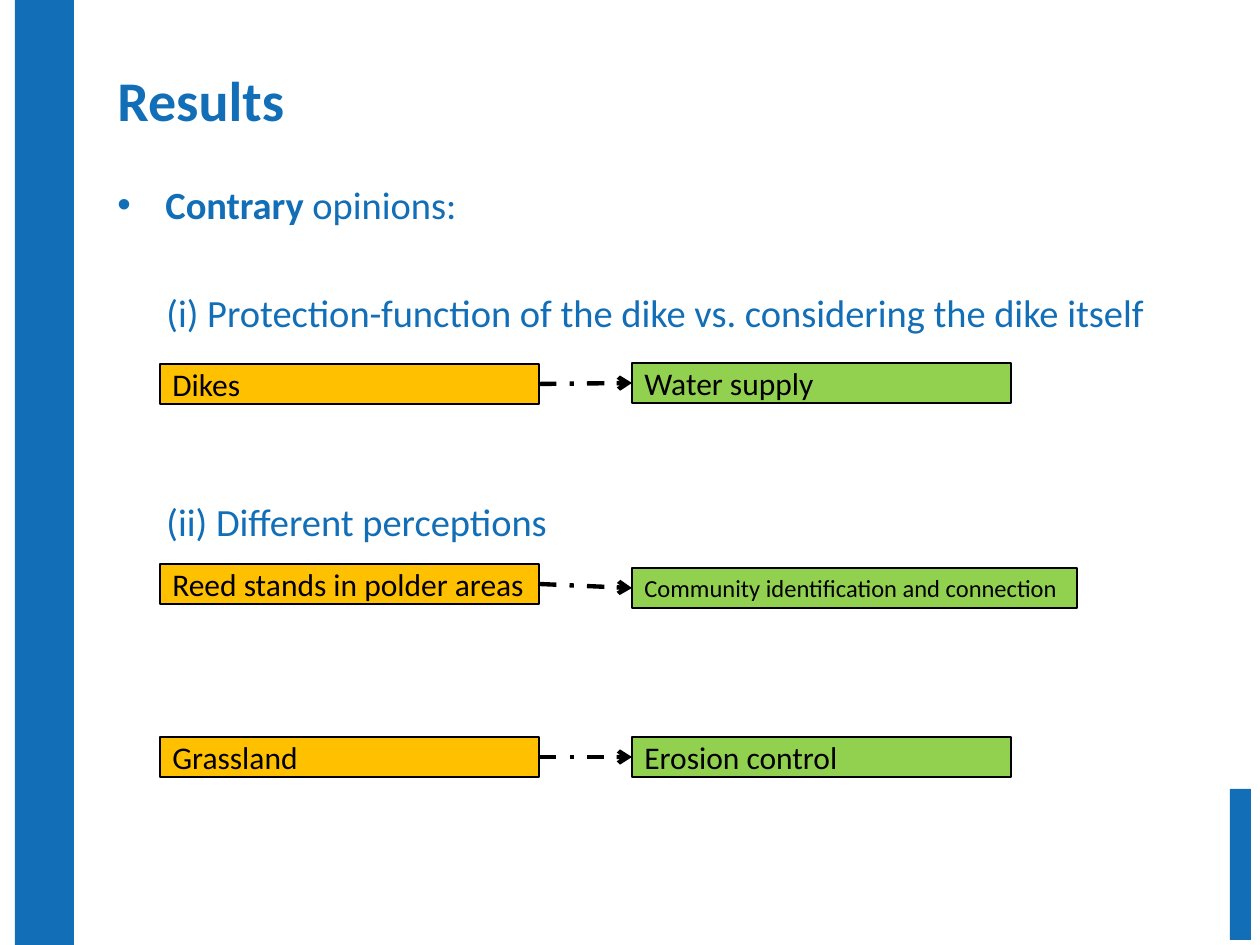
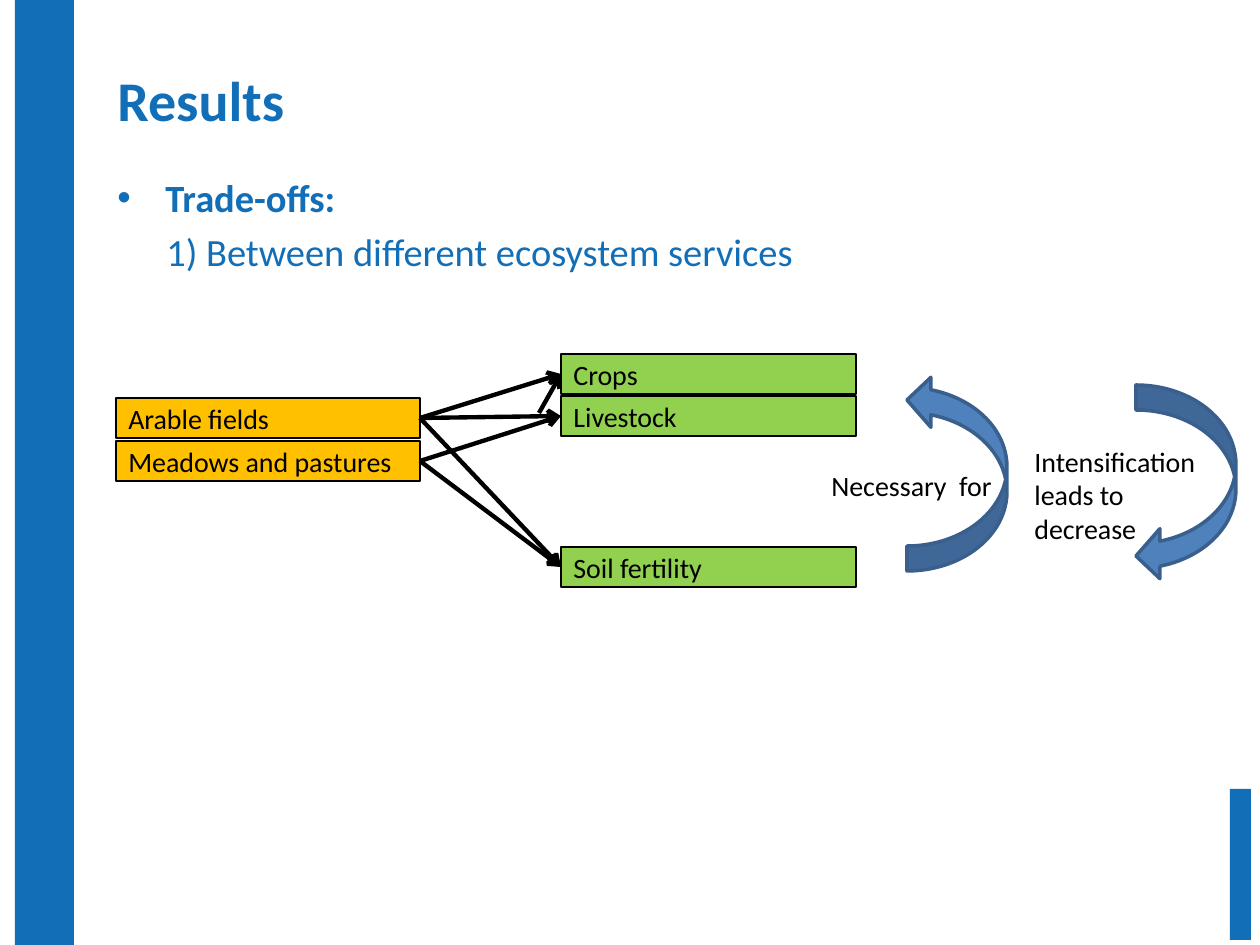
import pptx
import pptx.util
import pptx.dml.color
import pptx.enum.dml
import pptx.enum.shapes
import pptx.enum.text
import pptx.oxml.ns
import lxml.etree

PX = 914400 / 126
FONT = "Calibri"
COLORS = {
    "blue": "126EB6",
    "gold": "FFC000",
    "green": "92D050",
    "black": "000000",
    "steel": "4F81BD",
    "edge": "3A5F8C",
}
KINDS = pptx.enum.shapes.MSO_SHAPE
ANCHOR = pptx.enum.text.MSO_ANCHOR
DASH = pptx.enum.dml.MSO_LINE.DASH_DOT


def emu(px):
    return pptx.util.Emu(round(px * PX))


def rgb(name):
    return pptx.dml.color.RGBColor.from_string(COLORS[name])


def add_xml(parent, tag, **attrs):
    return lxml.etree.SubElement(parent, pptx.oxml.ns.qn(tag), attrs)


def write(para, text, size=18, color="black", bold=False):
    run = para.add_run()
    run.text = text
    font = run.font
    font.name = FONT
    font.size = pptx.util.Pt(size)
    font.bold = bold
    font.color.rgb = rgb(color)


def add_text(slide, area, text="", anchor=ANCHOR.TOP, **style):
    box = slide.shapes.add_textbox(*map(emu, area))
    frame = box.text_frame
    frame.word_wrap = True
    frame.vertical_anchor = anchor
    if text:
        write(frame.paragraphs[0], text, **style)
    return frame


def add_form(slide, kind, area, fill, line=None, width=0.75):
    form = slide.shapes.add_shape(kind, *map(emu, area))
    form.shadow.inherit = False
    form.fill.solid()
    form.fill.fore_color.rgb = rgb(fill)
    if line:
        form.line.color.rgb = rgb(line)
        form.line.width = pptx.util.Pt(width)
    else:
        form.line.fill.background()
    return form


def add_label(slide, text, left, top, width, fill, size=18):
    box = add_form(slide, KINDS.RECTANGLE, (left, top, width, 40), fill, "black")
    frame = box.text_frame
    frame.word_wrap = True
    frame.margin_top = frame.margin_bottom = 0
    frame.vertical_anchor = ANCHOR.MIDDLE
    para = frame.paragraphs[0]
    para.alignment = pptx.enum.text.PP_ALIGN.LEFT
    write(para, text, size=size)
    return box


def add_arrow(slide, start, goal, dash=None):
    free = isinstance(start, tuple)
    ends = [emu(v) for v in start] if free else [0, 0]
    link = slide.shapes.add_connector(
        pptx.enum.shapes.MSO_CONNECTOR.STRAIGHT, *ends, 0, 0)
    if not free:
        link.begin_connect(start, 3)
    link.end_connect(goal, 1)
    link.line.color.rgb = rgb("black")
    link.line.width = pptx.util.Pt(2.5)
    if dash:
        link.line.dash_style = dash
    add_xml(link.line._get_or_add_ln(), "a:tailEnd", type="arrow")
    add_xml(link._element.spPr, "a:effectLst")


def add_curve(slide, left, top, flip=False):
    curve = add_form(slide, KINDS.CURVED_LEFT_ARROW, (left, top, 100, 196),
                     "steel", "edge", 2)
    for place, value in enumerate((0.25, 0.5, 0.24)):
        curve.adjustments[place] = value
    if flip:
        curve._element.spPr.xfrm.set("flipV", "1")


def add_body(slide, top, height, lead, points):
    frame = add_text(slide, (105, top, 1113, height))
    para = frame.paragraphs[0]
    props = para._p.get_or_add_pPr()
    props.set("marL", str(emu(48)))
    props.set("indent", str(-emu(48)))
    add_xml(props, "a:buFont", typeface="Arial")
    add_xml(props, "a:buChar", char="•")
    for text, bold in lead:
        write(para, text, size=22, color="blue", bold=bold)
    for text, gap in points:
        para = frame.add_paragraph()
        para._p.get_or_add_pPr().set("marL", str(emu(49)))
        para.space_before = pptx.util.Pt(gap)
        write(para, text, size=22, color="blue")


def add_page(deck):
    slide = deck.slides.add_slide(deck.slide_layouts[6])
    for area in ((15, 0, 59, 945), (1230, 789, 21, 151)):
        add_form(slide, KINDS.RECTANGLE, area, "blue")
    add_text(slide, (105, 45, 1111, 108), "Results", anchor=ANCHOR.MIDDLE,
             size=32, color="blue", bold=True)
    return slide


def show_views(deck):
    slide = add_page(deck)
    add_body(slide, 175, 703, [("Contrary", True), (" opinions:", False)], [
        ("(i) Protection-function of the dike vs. considering the dike itself", 35),
        ("(ii) Different perceptions", 93),
    ])
    pairs = [
        ("Dikes", 364, "Water supply", 363, 379, 18),
        ("Reed stands in polder areas", 564,
         "Community identification and connection", 568, 445, 14),
        ("Grassland", 737, "Erosion control", 737, 379, 18),
    ]
    for land, high, gain, top, width, size in pairs:
        start = add_label(slide, land, 160, high, 379, "gold")
        goal = add_label(slide, gain, 632, top, width, "green", size)
        add_arrow(slide, start, goal, DASH)


def show_trades(deck):
    slide = add_page(deck)
    add_body(slide, 168, 624, [("Trade-offs:", True)],
             [("1) Between different ecosystem services", 4.4)])
    fields, meadows = [
        add_label(slide, text, 116, top, 304, "gold", 16)
        for text, top in (("Arable fields", 398), ("Meadows and pastures", 441))]
    crops, stock, soil = [
        add_label(slide, text, 561, top, 295, "green", 16)
        for text, top in (("Crops", 354), ("Livestock", 396), ("Soil fertility", 547))]
    for start, goal in ((fields, crops), (fields, stock), (meadows, stock),
                        (meadows, soil), ((539, 413), crops), (fields, soil)):
        add_arrow(slide, start, goal)
    add_text(slide, (819, 462, 189, 47), "Necessary  for", size=16)
    add_text(slide, (1022, 438, 193, 115), "Intensification leads to decrease", size=16)
    add_curve(slide, 907, 375, flip=True)
    add_curve(slide, 1136, 385)


def main():
    deck = pptx.Presentation()
    deck.slide_width, deck.slide_height = emu(1260), emu(945)
    show_views(deck)
    show_trades(deck)
    deck.save("out.pptx")


if __name__ == "__main__":
    main()
